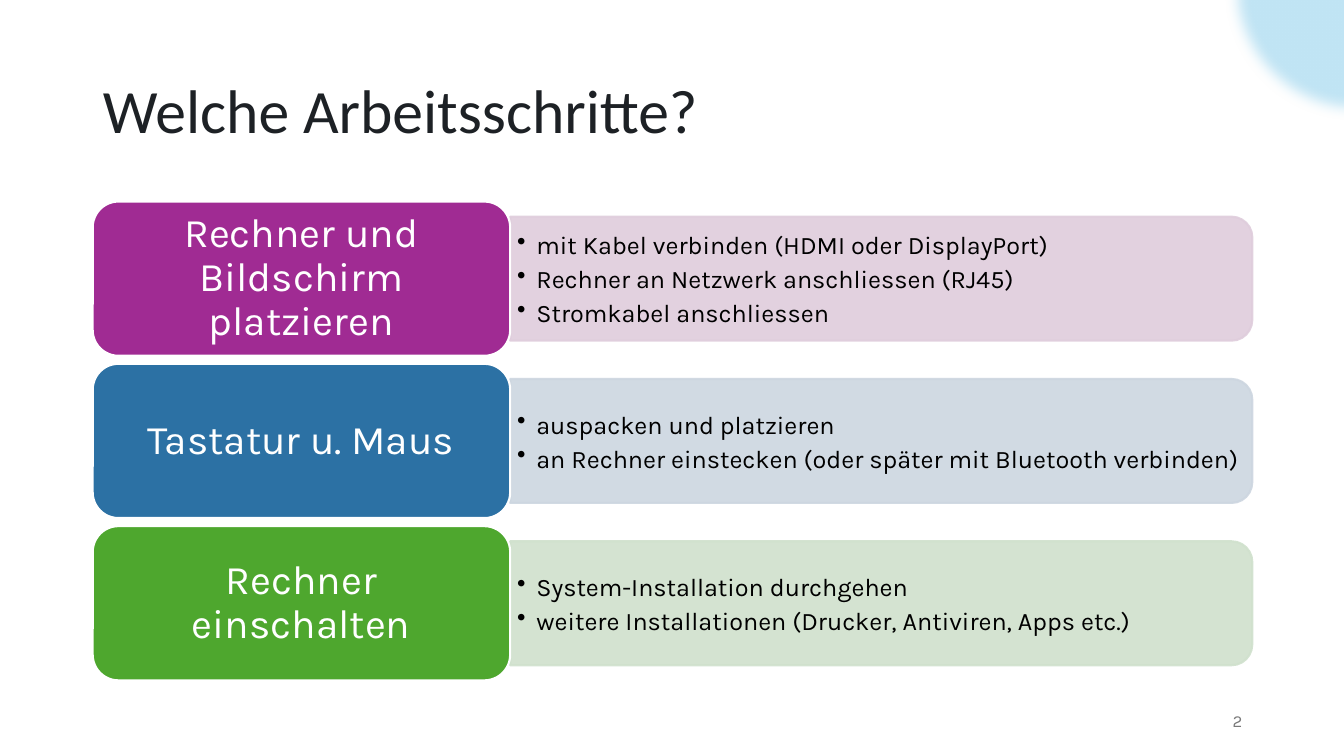
from lxml import etree
from pptx import Presentation
from pptx.dml.color import RGBColor
from pptx.enum.shapes import MSO_SHAPE as SHAPE
from pptx.enum.text import MSO_ANCHOR as ANCHOR, PP_ALIGN as ALIGN
from pptx.oxml.ns import qn
from pptx.util import Inches, Pt

COLORS = {
    "title": "1D2125", "text": "000000", "white": "FFFFFF",
    "number": "797979", "corner": "C1E5F5",
    "purple": "A02B93", "purple_pale": "DFCDDC",
    "blue": "2C71A4", "blue_pale": "CDD6E0",
    "green": "4EA72E", "green_pale": "D0E1CD",
}
STEPS = [
    ("Rechner und Bildschirm platzieren", "purple",
     ["mit Kabel verbinden (HDMI oder DisplayPort)",
      "Rechner an Netzwerk anschliessen (RJ45)",
      "Stromkabel anschliessen"]),
    ("Tastatur u. Maus", "blue",
     ["auspacken und platzieren",
      "an Rechner einstecken (oder später mit Bluetooth verbinden)"]),
    ("Rechner einschalten", "green",
     ["System-Installation durchgehen",
      "weitere Installationen (Drucker, Antiviren, Apps etc.)"]),
]
LEFT, TOP, PITCH = 0.92, 2.0, 1.61
LABEL_W, LABEL_H = 4.14, 1.53
PANEL_W, PANEL_H = 7.36, 1.23


def rgb(name):
    return RGBColor.from_string(COLORS[name])


def box(x, y, w, h):
    return [Inches(v) for v in (x, y, w, h)]


def set_frame(tf, inset_x=0.1, inset_y=0.05):
    tf.word_wrap = True
    tf.vertical_anchor = ANCHOR.MIDDLE
    tf.margin_left = tf.margin_right = Inches(inset_x)
    tf.margin_top = tf.margin_bottom = Inches(inset_y)


def style(p, size, color, font="Karla", align=ALIGN.LEFT, spacing=1.0):
    p.alignment = align
    p.line_spacing = spacing
    for r in p.runs:
        r.font.size = Pt(size)
        r.font.name = font
        r.font.color.rgb = rgb(color)


def add_filled(s, kind, place, fill, line=None):
    sp = s.shapes.add_shape(kind, *box(*place))
    sp.shadow.inherit = False
    sp.fill.solid()
    sp.fill.fore_color.rgb = rgb(fill)
    if line:
        sp.line.color.rgb = rgb(line)
        sp.line.width = Pt(1.5)
    else:
        sp.line.fill.background()
    return sp


def add_title(s, text):
    sp = s.shapes.title
    sp.left, sp.top, sp.width, sp.height = box(0.92, 0.4, 11.5, 1.45)
    tf = sp.text_frame
    tf.text = text
    set_frame(tf)
    style(tf.paragraphs[0], 44, "title", "Calibri", spacing=0.9)


def add_corner(s):
    sp = add_filled(s, SHAPE.OVAL, (12.13, -1.21, 2.42, 2.42), "corner")
    effects = sp._element.spPr.find(qn("a:effectLst"))
    etree.SubElement(effects, qn("a:softEdge"), rad=str(Inches(0.14)))


def add_panel(s, y, color):
    # Turned a quarter, so the rounded end points right
    x = LEFT + LABEL_W + (PANEL_W - PANEL_H) / 2
    top = y + (LABEL_H - PANEL_W) / 2
    sp = add_filled(s, SHAPE.ROUND_2_SAME_RECTANGLE,
                    (x, top, PANEL_H, PANEL_W), color, color)
    sp.rotation = 90
    for clr in sp._element.spPr.iter(qn("a:srgbClr")):
        etree.SubElement(clr, qn("a:alpha"), val="90000")


def add_bullets(s, y, items):
    sp = s.shapes.add_textbox(*box(LEFT + LABEL_W, y + 0.21, 7.3, 1.11))
    tf = sp.text_frame
    set_frame(tf, 0.07, 0.04)
    tf.text = "\n".join(items)
    for p in tf.paragraphs:
        pPr = p._p.get_or_add_pPr()
        pPr.set("marL", str(Inches(0.19)))
        pPr.set("indent", str(-Inches(0.19)))
        etree.SubElement(pPr, qn("a:buChar"), char="•")
        p.space_after = Pt(2.7)
        style(p, 18, "text")


def add_label(s, y, text, color):
    sp = add_filled(s, SHAPE.ROUNDED_RECTANGLE,
                    (LEFT, y, LABEL_W, LABEL_H), color, "white")
    tf = sp.text_frame
    set_frame(tf, 0.12, 0.06)
    tf.text = text
    style(tf.paragraphs[0], 29, "white", align=ALIGN.CENTER, spacing=0.9)


def add_number(s, text):
    tf = s.shapes.add_textbox(*box(9.42, 6.95, 3, 0.4)).text_frame
    set_frame(tf)
    tf.text = text
    style(tf.paragraphs[0], 12, "number", align=ALIGN.RIGHT)


def main():
    prs = Presentation()
    prs.slide_width, prs.slide_height = Inches(13.33), Inches(7.5)
    s = prs.slides.add_slide(prs.slide_layouts[5])

    # Heading and corner decoration
    add_corner(s)
    add_title(s, "Welche Arbeitsschritte?")

    # One row per work step
    for i, (label, color, items) in enumerate(STEPS):
        y = TOP + i * PITCH
        add_panel(s, y, color + "_pale")
        add_bullets(s, y, items)
        add_label(s, y, label, color)

    # Page number
    add_number(s, "2")
    prs.save("out.pptx")


if __name__ == "__main__":
    main()
